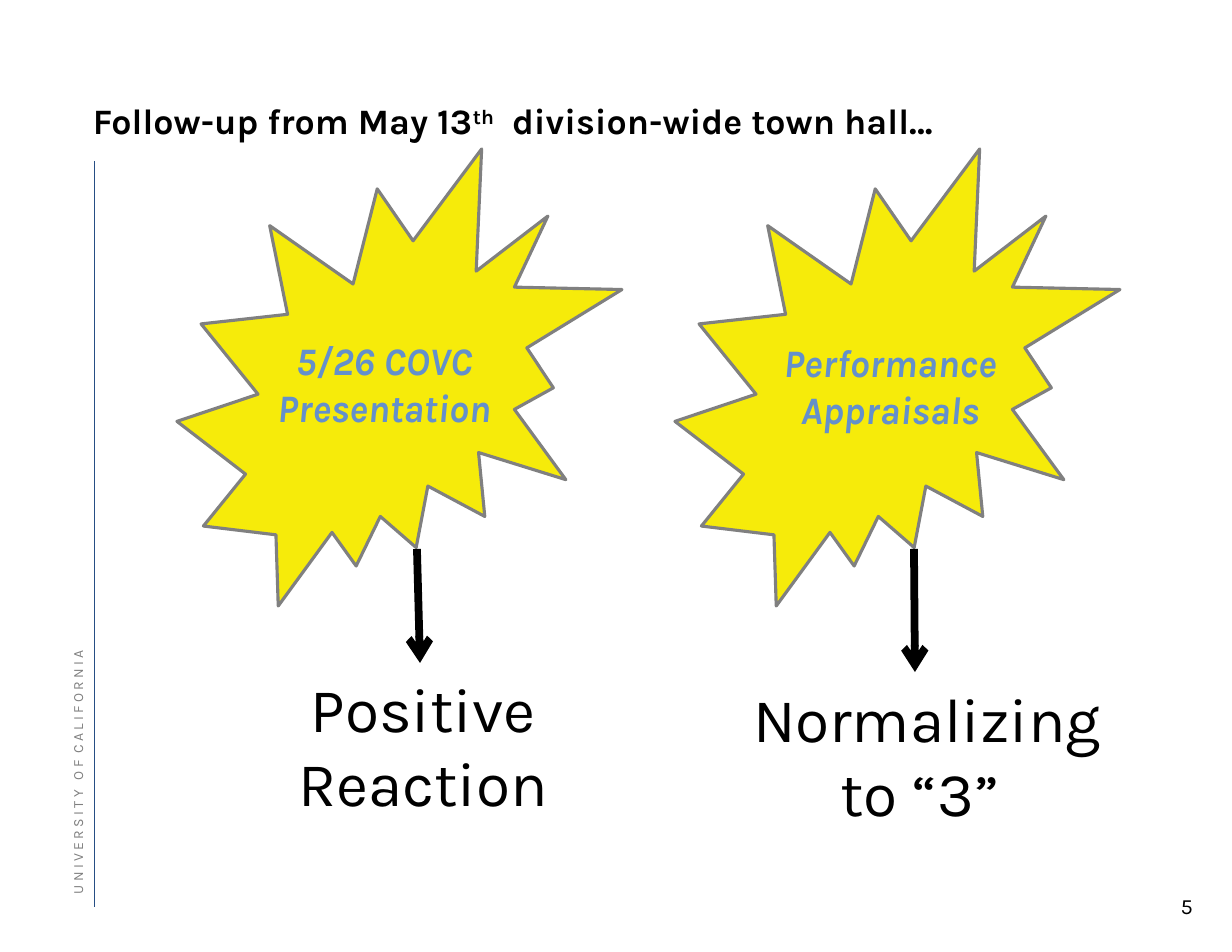
"""Build the town hall follow-up slide with two bursts and their outcomes."""
import pptx
import pptx.util
import pptx.dml.color
import pptx.enum.shapes
import pptx.enum.text
import pptx.oxml.ns
import lxml.etree

PX = 914400 / 112
HUES = {"ink": "000000", "rule": "264E84", "gray": "808080", "sun": "F6EB0A", "sky": "6490CB"}
ALIGN = pptx.enum.text.PP_ALIGN
ANCHOR = pptx.enum.text.MSO_ANCHOR
Pt = pptx.util.Pt


def hue(name):
    return pptx.dml.color.RGBColor.from_string(HUES[name])


def style(shape, size, color, align, bold=False, italic=False, pads=None, anchor=ANCHOR.TOP, wrap=True):
    frame = shape.text_frame
    frame.word_wrap = wrap
    frame.vertical_anchor = anchor
    if pads:
        sides = ("margin_left", "margin_top", "margin_right", "margin_bottom")
        for side, pad in zip(sides, pads):
            setattr(frame, side, round(pad * PX))
    for para in frame.paragraphs:
        para.alignment = align
        for run in para.runs:
            run.font.name = "Karla"
            run.font.size = Pt(size)
            run.font.bold = bold
            run.font.italic = italic
            run.font.color.rgb = hue(color)


deck = pptx.Presentation()
deck.slide_width = round(1232 * PX)
deck.slide_height = round(952 * PX)
slide = deck.slides.add_slide(deck.slide_layouts[5])
shapes = slide.shapes

title = shapes.title
title.left, title.top, title.width, title.height = [round(n * PX) for n in (93, 106, 1064, 36)]
para = title.text_frame.paragraphs[0]
for text in ("Follow-up from May 13", "th", "  division-wide town hall…"):
    para.add_run().text = text
para.line_spacing = Pt(27.9)
style(title, 23, "ink", ALIGN.LEFT, bold=True, pads=(0, 0, 0, 0), anchor=ANCHOR.BOTTOM)
para.runs[1].font._element.set("baseline", "30000")

page = shapes.add_textbox(*[round(n * PX) for n in (1148, 887, 56, 37)])
page.text_frame.text = "5"
style(page, 14, "ink", ALIGN.RIGHT)

side = shapes.add_textbox(*[round(n * PX) for n in (-165, 643, 485, 17)])
side.rotation = 270
side.text_frame.text = "U N I V E R S I T Y   O F  C A L I F O R N I A"
side.text_frame.paragraphs[0].line_spacing = Pt(12)
style(side, 9, "gray", ALIGN.LEFT, pads=(0, 0, 0, 0), anchor=ANCHOR.BOTTOM, wrap=False)

bursts = [
    (177, (241, 250), "5/26 COVC\nPresentation"),
    (675, (747, 252), "Performance Appraisals"),
]
for left, spot, text in bursts:
    burst = shapes.add_shape(
        pptx.enum.shapes.MSO_SHAPE.EXPLOSION2, *[round(n * PX) for n in (left, 149, 445, 457)]
    )
    burst.shadow.inherit = False
    burst.fill.solid()
    burst.fill.fore_color.rgb = hue("sun")
    burst.line.color.rgb = hue("gray")
    burst.line.width = Pt(2)
    label = shapes.add_textbox(*[round(n * PX) for n in (*spot, 286, 267)])
    label.text_frame.text = text
    style(label, 25, "sky", ALIGN.CENTER, bold=True, italic=True, anchor=ANCHOR.MIDDLE)

lines = [
    ((94, 161, 94, 907), "rule", 0.35, False),
    ((417, 549, 420, 663), "ink", 5, True),
    ((914, 549, 915, 672), "ink", 5, True),
]
for ends, color, width, arrow in lines:
    line = shapes.add_connector(
        pptx.enum.shapes.MSO_CONNECTOR.STRAIGHT, *[round(n * PX) for n in ends]
    )
    line.line.color.rgb = hue(color)
    line.line.width = Pt(width)
    if arrow:
        tail = lxml.etree.SubElement(line.line._get_or_add_ln(), pptx.oxml.ns.qn("a:tailEnd"))
        tail.set("type", "arrow")
    lxml.etree.SubElement(line._element.spPr, pptx.oxml.ns.qn("a:effectLst"))

for left, top, text in [(187, 666, "Positive Reaction"), (691, 676, "Normalizing to “3” ")]:
    result = shapes.add_textbox(*[round(n * PX) for n in (left, top, 439, 146)])
    result.text_frame.text = text
    style(result, 40, "ink", ALIGN.CENTER, pads=(11, 4, 4, 4))
    result.text_frame.paragraphs[0]._p.get_or_add_pPr().set("marL", str(round(26 * PX)))

deck.save("out.pptx")
